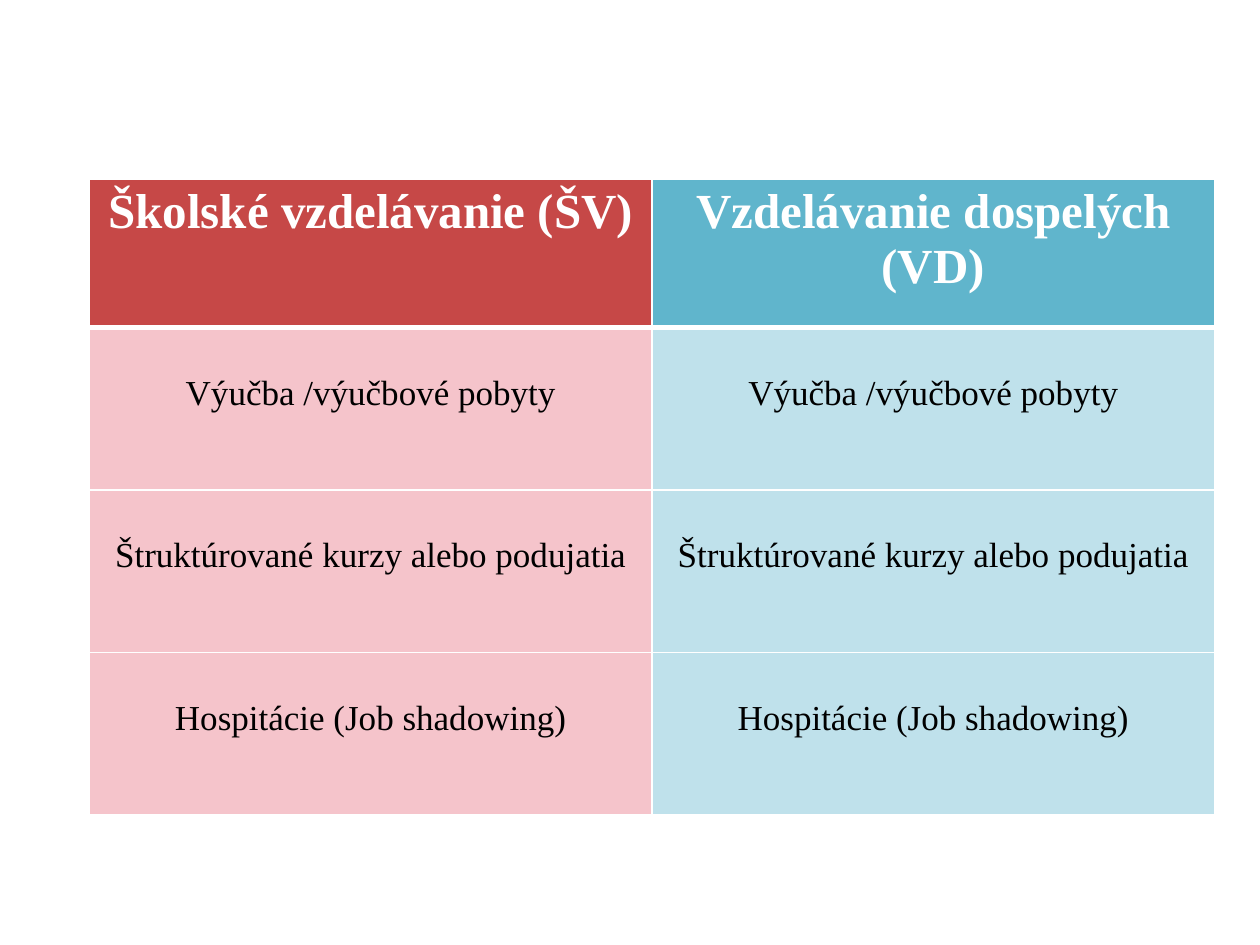
"""Build a slide with a table of activities in school and adult education."""
import lxml.etree
import pptx
import pptx.dml.color
import pptx.enum.text
import pptx.oxml.ns
import pptx.util

Inches = pptx.util.Inches
Pt = pptx.util.Pt
RGBColor = pptx.dml.color.RGBColor
qn = pptx.oxml.ns.qn

WHITE = RGBColor(0xFF, 0xFF, 0xFF)
BLACK = RGBColor(0x00, 0x00, 0x00)
HEADER_FILLS = [RGBColor(0xC6, 0x48, 0x47), RGBColor(0x60, 0xB5, 0xCC)]
BODY_FILLS = [RGBColor(0xF5, 0xC4, 0xCB), RGBColor(0xBF, 0xE1, 0xEB)]

HEADERS = ["Školské vzdelávanie (ŠV)", "Vzdelávanie dospelých (VD)"]
ACTIVITIES = [
    "Výučba /výučbové pobyty",
    "Štruktúrované kurzy alebo podujatia",
    "Hospitácie (Job shadowing)",
]
ROWS = [HEADERS] + [[activity] * 2 for activity in ACTIVITIES]
HEIGHTS = [1.18] + [1.29] * len(ACTIVITIES)


def add_border(cell, side, width):
    tc_pr = cell._tc.get_or_add_tcPr()
    line = lxml.etree.SubElement(tc_pr, qn(f"a:ln{side}"), w=str(Pt(width)))
    fill = lxml.etree.SubElement(line, qn("a:solidFill"))
    lxml.etree.SubElement(fill, qn("a:srgbClr"), val=str(WHITE))


prs = pptx.Presentation()
prs.slide_width = Inches(10)
prs.slide_height = Inches(7.5)
s = prs.slides.add_slide(prs.slide_layouts[6])

table = s.shapes.add_table(
    len(ROWS), 2, Inches(0.71), Inches(1.42), Inches(8.93), Inches(sum(HEIGHTS))
).table
for column in table.columns:
    column.width = Inches(4.465)

for i, (texts, height) in enumerate(zip(ROWS, HEIGHTS)):
    table.rows[i].height = Inches(height)
    header = i == 0
    fills = HEADER_FILLS if header else BODY_FILLS
    for j, text in enumerate(texts):
        cell = table.cell(i, j)
        add_border(cell, "L", 1)
        add_border(cell, "R", 1)
        add_border(cell, "T", 3 if i == 1 else 1)
        add_border(cell, "B", 3 if header else 1)
        cell.fill.solid()
        cell.fill.fore_color.rgb = fills[j]
        cell.margin_top = Inches(0.05 if header else 0.37)
        p = cell.text_frame.paragraphs[0]
        p.text = text
        p.alignment = pptx.enum.text.PP_ALIGN.CENTER
        p.font.name = "Times New Roman"
        p.font.size = Pt(28 if header else 20)
        p.font.bold = header
        p.font.color.rgb = WHITE if header else BLACK

prs.save("out.pptx")
